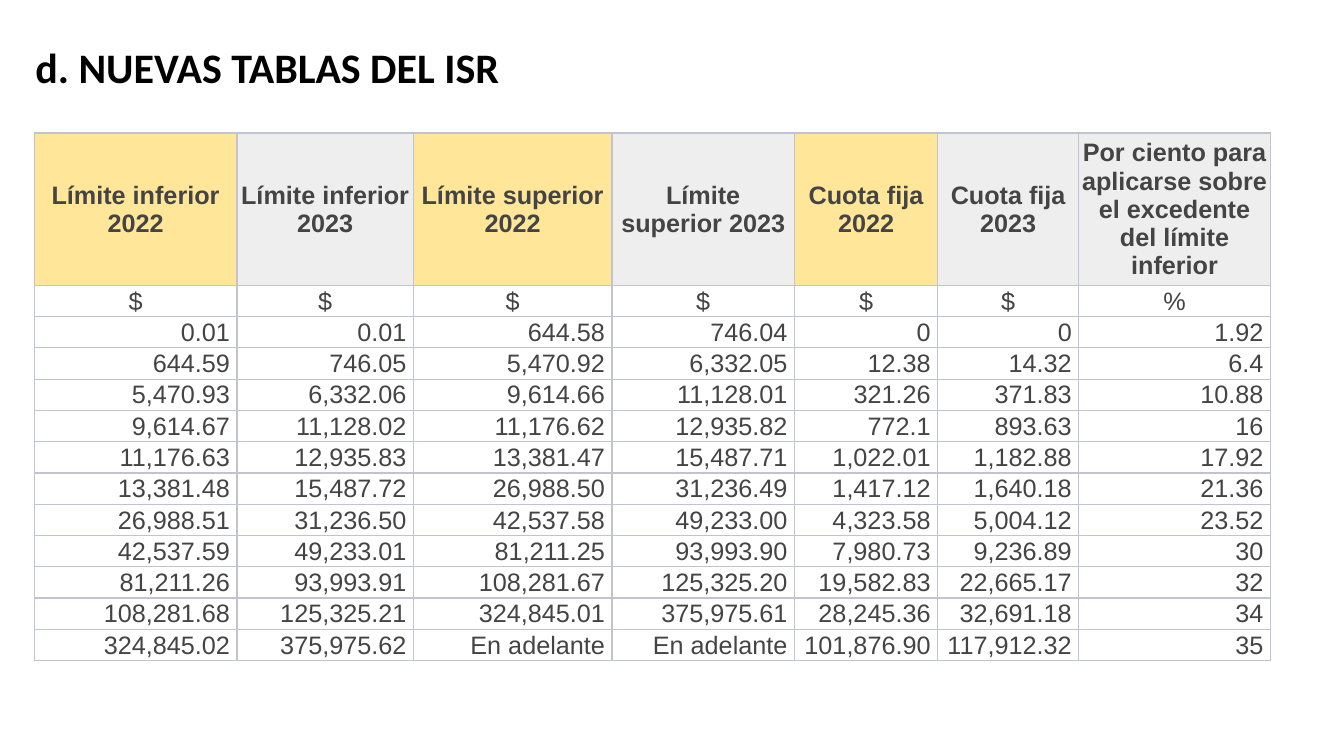
from dataclasses import dataclass

from lxml.etree import SubElement
from pptx import Presentation
from pptx.dml.color import RGBColor
from pptx.enum.text import MSO_ANCHOR, MSO_AUTO_SIZE, PP_ALIGN
from pptx.oxml.ns import qn
from pptx.util import Inches, Pt


@dataclass(frozen=True)
class Theme:
    title_font: str = "Calibri"
    table_font: str = "Arial"
    title_size: int = 30
    table_size: int = 18
    title_color: str = "000000"
    table_color: str = "444444"
    border: str = "C1C3D1"
    border_width: int = 1
    year_2022: str = "FFE699"
    year_2023: str = "EEEEEE"
    body: str = "FFFFFF"


THEME = Theme()

# The page is a grid of 1333 columns by 750 rows.
PAGE_COLUMNS, PAGE_ROWS = 1333, 750
LEFT = 34
TABLE_TOP = 132
COLUMN_SPANS = (201, 175, 197, 181, 142, 140, 190)
HEADER_SPAN, BODY_SPAN = 151, 30.75

HEADERS = (
    "Límite inferior 2022", "Límite inferior 2023",
    "Límite superior 2022", "Límite superior 2023",
    "Cuota fija 2022", "Cuota fija 2023",
    "Por ciento para aplicarse sobre el excedente del límite inferior",
)
UNITS = ("$",) * 6 + ("%",)
RATES = (
    ("0.01", "0.01", "644.58", "746.04", "0", "0", "1.92"),
    ("644.59", "746.05", "5,470.92", "6,332.05", "12.38", "14.32", "6.4"),
    ("5,470.93", "6,332.06", "9,614.66", "11,128.01", "321.26", "371.83", "10.88"),
    ("9,614.67", "11,128.02", "11,176.62", "12,935.82", "772.1", "893.63", "16"),
    ("11,176.63", "12,935.83", "13,381.47", "15,487.71", "1,022.01", "1,182.88", "17.92"),
    ("13,381.48", "15,487.72", "26,988.50", "31,236.49", "1,417.12", "1,640.18", "21.36"),
    ("26,988.51", "31,236.50", "42,537.58", "49,233.00", "4,323.58", "5,004.12", "23.52"),
    ("42,537.59", "49,233.01", "81,211.25", "93,993.90", "7,980.73", "9,236.89", "30"),
    ("81,211.26", "93,993.91", "108,281.67", "125,325.20", "19,582.83", "22,665.17", "32"),
    ("108,281.68", "125,325.21", "324,845.01", "375,975.61", "28,245.36", "32,691.18", "34"),
    ("324,845.02", "375,975.62", "En adelante", "En adelante", "101,876.90", "117,912.32", "35"),
)


def grid(count):
    """Length of a number of page grid units."""
    return Inches(count / 100)


def write_text(frame, text, *, font, size, color, bold=False, align=PP_ALIGN.LEFT):
    para = frame.paragraphs[0]
    para.alignment = align
    span = para.add_run()
    span.text = text
    span.font.name = font
    span.font.size = Pt(size)
    span.font.bold = bold
    span.font.color.rgb = RGBColor.from_string(color)


def set_margins(target, left, top, right, bottom):
    """Set the insets of a cell or text frame in grid units."""
    target.margin_left, target.margin_top = grid(left), grid(top)
    target.margin_right, target.margin_bottom = grid(right), grid(bottom)


def add_title(page, text):
    box = page.shapes.add_textbox(grid(LEFT), grid(39), grid(879), grid(52))
    frame = box.text_frame
    frame.word_wrap = True
    frame.auto_size = MSO_AUTO_SIZE.SHAPE_TO_FIT_TEXT
    frame.vertical_anchor = MSO_ANCHOR.BOTTOM
    set_margins(frame, 1, 1, 0, 0)
    write_text(frame, text, font=THEME.title_font, size=THEME.title_size,
               color=THEME.title_color, bold=True)


def add_borders(cell):
    properties = cell._tc.get_or_add_tcPr()
    for side in ("a:lnL", "a:lnR", "a:lnT", "a:lnB"):
        line = SubElement(properties, qn(side), w=str(Pt(THEME.border_width)))
        fill = SubElement(line, qn("a:solidFill"))
        SubElement(fill, qn("a:srgbClr"), val=THEME.border)


def fill_cell(cell, text, *, fill, align, bold=False):
    add_borders(cell)
    cell.fill.solid()
    cell.fill.fore_color.rgb = RGBColor.from_string(fill)
    cell.vertical_anchor = MSO_ANCHOR.MIDDLE
    set_margins(cell, 1, 1, 7 if align == PP_ALIGN.RIGHT else 1, 0)
    write_text(cell.text_frame, text, font=THEME.table_font, size=THEME.table_size,
               color=THEME.table_color, bold=bold, align=align)


def add_rate_table(page):
    rows = (HEADERS, UNITS, *RATES)
    height = HEADER_SPAN + BODY_SPAN * (len(rows) - 1)
    table = page.shapes.add_table(
        len(rows), len(HEADERS), grid(LEFT), grid(TABLE_TOP),
        grid(sum(COLUMN_SPANS)), grid(height)).table
    table.first_row = table.horz_banding = False
    for column, span in zip(table.columns, COLUMN_SPANS):
        column.width = grid(span)
    for row_index, texts in enumerate(rows):
        is_header = row_index == 0
        table.rows[row_index].height = grid(HEADER_SPAN if is_header else BODY_SPAN)
        align = PP_ALIGN.CENTER if row_index < 2 else PP_ALIGN.RIGHT
        for column_index, text in enumerate(texts):
            header_fill = THEME.year_2022 if text.endswith("2022") else THEME.year_2023
            fill_cell(table.cell(row_index, column_index), text, align=align,
                      fill=header_fill if is_header else THEME.body, bold=is_header)


def main():
    deck = Presentation()
    deck.slide_width, deck.slide_height = grid(PAGE_COLUMNS), grid(PAGE_ROWS)
    page = deck.slides.add_slide(deck.slide_layouts[6])
    add_title(page, "d. NUEVAS TABLAS DEL ISR")
    add_rate_table(page)
    deck.save("out.pptx")


if __name__ == "__main__":
    main()
